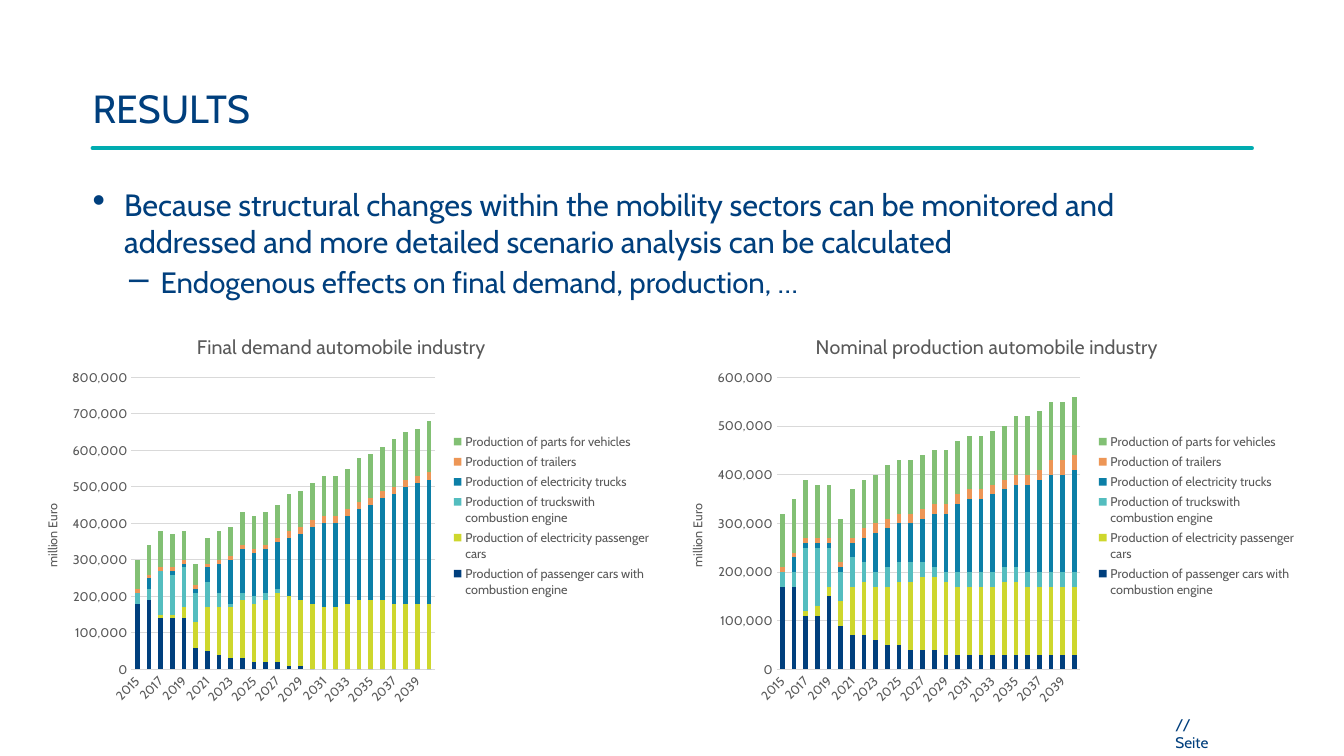
from dataclasses import dataclass

from lxml import etree
from pptx import Presentation
from pptx import util as u
from pptx.chart.axis import CategoryAxis, ValueAxis
from pptx.chart.chart import Chart
from pptx.chart.data import CategoryChartData
from pptx.dml.color import RGBColor
from pptx.enum import chart as charts, dml, shapes, text
from pptx.oxml.ns import qn
from pptx.slide import Slide
from pptx.text.text import Font, TextFrame

NAVY = RGBColor(0x00, 0x3F, 0x7D)
TURQUOISE = RGBColor(0x00, 0xAC, 0xB0)
LIME = RGBColor(0xCE, 0xD7, 0x2D)
AQUA = RGBColor(0x54, 0xBD, 0xBF)
BLUE = RGBColor(0x0C, 0x7F, 0xA7)
ORANGE = RGBColor(0xED, 0x96, 0x56)
GREEN = RGBColor(0x82, 0xC0, 0x74)
GRAY = RGBColor(0x59, 0x59, 0x59)
LIGHT_GRAY = RGBColor(0xD9, 0xD9, 0xD9)
FONT = "Cabin"
YEARS = [str(year) for year in range(2015, 2041)]
VALUE_UNIT = 10_000


@dataclass
class Sector:
    name: str
    color: RGBColor


@dataclass
class Bullet:
    words: str
    symbol: str
    size: float
    level: int
    margin: float
    space_before: float


@dataclass
class IndustryChart:
    title: str
    left: float
    title_x: float
    maximum: int
    values: list[list[int]]


SECTORS = [
    Sector("Production of passenger cars with combustion engine", NAVY),
    Sector("Production of electricity passenger cars", LIME),
    Sector("Production of truckswith combustion engine", AQUA),
    Sector("Production of electricity trucks", BLUE),
    Sector("Production of trailers", ORANGE),
    Sector("Production of parts for vehicles", GREEN),
]
BULLETS = [
    Bullet("Because structural changes within the mobility sectors can be monitored and "
           "addressed and more detailed scenario analysis can be calculated", "•", 22, 0, 22.5, 0),
    Bullet("Endogenous effects on final demand, production, …", "–", 21, 1, 48.5, 3),
]
CHARTS = [
    IndustryChart("Final demand automobile industry", 10.8, 0.276, 800_000, [
        [18, 19, 14, 14, 14, 6, 5, 4, 3, 3, 2, 2, 2, 1, 1] + [0] * 11,
        [0, 0, 1, 1, 3, 7, 12, 13, 14, 16, 16, 17, 19, 19, 18, 18, 17, 17, 18, 19, 19, 19, 18, 18, 18, 18],
        [3, 3, 12, 11, 11, 8, 7, 4, 1, 2, 2, 2, 1] + [0] * 13,
        [0, 3, 0, 1, 1, 1, 4, 8, 12, 12, 12, 12, 13, 16, 18, 21, 23, 23, 24, 25, 26, 28, 30, 32, 33, 34],
        [1] * 13 + [2] * 13,
        [8, 8, 10, 9, 8, 6, 7, 8, 8, 9, 9, 9, 9, 10, 10, 10, 11, 11, 11, 12, 12, 12, 13, 13, 13, 14],
    ]),
    IndustryChart("Nominal production automobile industry", 471.6, 0.235, 600_000, [
        [17, 17, 11, 11, 15, 9, 7, 7, 6, 5, 5, 4, 4, 4] + [3] * 12,
        [0, 0, 1, 2, 2, 5, 10, 11, 11, 12, 13, 14, 15, 15, 15, 14, 14, 14, 14, 15, 15, 14, 14, 14, 14, 14],
        [3, 3, 13, 12, 8, 6, 6, 4, 3, 4, 4, 4, 3, 2, 2] + [3] * 11,
        [0, 3, 1, 1, 1, 1, 3, 5, 8, 8, 8, 8, 9, 11, 12, 14, 15, 15, 16, 16, 17, 18, 19, 20, 20, 21],
        [1] * 7 + [2] * 16 + [3] * 3,
        [11, 11, 12, 11, 11, 9, 10, 10, 10] + [11] * 11 + [12] * 6,
    ]),
]


def style_font(font: Font, size: float, color: RGBColor) -> None:
    font.name = FONT
    font.size = u.Pt(size)
    font.bold = False
    font.color.rgb = color


def set_frame(frame: TextFrame, anchor: text.MSO_ANCHOR, bottom: float = 0) -> None:
    frame.word_wrap = True
    frame.auto_size = text.MSO_AUTO_SIZE.NONE
    frame.vertical_anchor = anchor
    frame.margin_left = frame.margin_right = frame.margin_top = 0
    frame.margin_bottom = u.Pt(bottom)


def add_frame(slide: Slide, left: float, top: float, width: float, height: float) -> TextFrame:
    box = slide.shapes.add_textbox(u.Pt(left), u.Pt(top), u.Pt(width), u.Pt(height))
    set_frame(box.text_frame, text.MSO_ANCHOR.TOP)
    return box.text_frame


def add_title(slide: Slide) -> None:
    title = slide.shapes.title
    title.left, title.top, title.width, title.height = u.Pt(66.2), u.Pt(0.7), u.Pt(828), u.Pt(104.4)
    set_frame(title.text_frame, text.MSO_ANCHOR.BOTTOM, 11.5)
    paragraph = title.text_frame.paragraphs[0]
    paragraph.text = "RESULTS"
    paragraph.alignment = text.PP_ALIGN.LEFT
    style_font(paragraph.font, 28, NAVY)


def add_rule(slide: Slide) -> None:
    rule = slide.shapes.add_connector(
        shapes.MSO_CONNECTOR.STRAIGHT, u.Pt(66.2), u.Pt(105.8), u.Pt(894.2), u.Pt(105.8))
    rule.line.color.rgb = TURQUOISE
    rule.line.width = u.Pt(3)
    properties = rule._element.spPr
    properties.find(qn("a:ln")).set("cap", "rnd")
    etree.SubElement(properties, qn("a:effectLst"))


def add_bullets(slide: Slide) -> None:
    frame = add_frame(slide, 66.2, 133, 828, 90)
    for index, bullet in enumerate(BULLETS):
        paragraph = frame.add_paragraph() if index else frame.paragraphs[0]
        paragraph.text = bullet.words
        paragraph.level = bullet.level
        paragraph.space_before = u.Pt(bullet.space_before)
        properties = paragraph._p.get_or_add_pPr()
        properties.set("marL", str(u.Pt(bullet.margin)))
        properties.set("indent", str(u.Pt(-22.5)))
        etree.SubElement(properties, qn("a:buSzPct")).set("val", "120000")
        etree.SubElement(properties, qn("a:buChar")).set("char", bullet.symbol)
        style_font(paragraph.font, bullet.size, NAVY)


def place(element: etree._Element, index: int, **fractions: float) -> None:
    for layout in element.findall(qn("c:layout")):
        element.remove(layout)
    layout = etree.Element(qn("c:layout"))
    element.insert(index, layout)
    manual = etree.SubElement(layout, qn("c:manualLayout"))
    if element.tag == qn("c:plotArea"):
        etree.SubElement(manual, qn("c:layoutTarget")).set("val", "inner")
    for side in ("xMode", "yMode"):
        etree.SubElement(manual, qn(f"c:{side}")).set("val", "edge")
    for name, fraction in fractions.items():
        etree.SubElement(manual, qn(f"c:{name}")).set("val", str(fraction))


def add_caption(owner: Chart | ValueAxis, words: str, size: float, x: float, y: float) -> None:
    title = owner.chart_title if isinstance(owner, Chart) else owner.axis_title
    paragraph = title.text_frame.paragraphs[0]
    paragraph.text = words
    style_font(paragraph.font, size, GRAY)
    style_font(paragraph.runs[0].font, size, GRAY)
    place(title._element, 1, x=x, y=y)


def style_axis(axis: CategoryAxis | ValueAxis) -> None:
    axis.major_tick_mark = axis.minor_tick_mark = charts.XL_TICK_MARK.NONE
    style_font(axis.tick_labels.font, 9, GRAY)


def add_industry_chart(slide: Slide, industry: IndustryChart) -> None:
    data = CategoryChartData(number_format="#,##0")
    data.categories = YEARS
    for sector, values in zip(SECTORS, industry.values):
        data.add_series(sector.name, [value * VALUE_UNIT for value in values])
    chart = slide.shapes.add_chart(
        charts.XL_CHART_TYPE.COLUMN_STACKED, u.Pt(industry.left), u.Pt(223.9),
        u.Pt(461.5), u.Pt(285.8), data).chart
    style_font(chart.font, 10, GRAY)
    plot = chart.plots[0]
    plot.gap_width, plot.overlap, plot.vary_by_categories = 150, 100, False
    for series, sector in zip(plot.series, SECTORS):
        series.format.fill.solid()
        series.format.fill.fore_color.rgb = sector.color

    years, amounts = chart.category_axis, chart.value_axis
    style_axis(years)
    years.format.line.color.rgb = LIGHT_GRAY
    years.format.line.width = u.Pt(0.75)
    years._element.find(qn("c:txPr")).find(qn("a:bodyPr")).set("rot", "-2700000")
    style_axis(amounts)
    amounts.minimum_scale, amounts.maximum_scale, amounts.major_unit = 0, industry.maximum, 100_000
    amounts.tick_labels.number_format = "#,##0"
    amounts.tick_labels.number_format_is_linked = False
    amounts.format.line.fill.background()
    grid = amounts.major_gridlines.format.line
    grid.color.rgb, grid.width, grid.dash_style = LIGHT_GRAY, u.Pt(0.75), dml.MSO_LINE.SOLID

    add_caption(chart, industry.title, 14, industry.title_x, 0.04)
    add_caption(amounts, "million Euro", 9, 0.04, 0.47)
    direction = amounts.axis_title.text_frame._txBody.find(qn("a:bodyPr"))
    direction.set("rot", "-5400000")
    direction.set("vert", "horz")
    chart.has_legend = True
    chart.legend.position = charts.XL_LEGEND_POSITION.RIGHT
    chart.legend.include_in_layout = False
    style_font(chart.legend.font, 9, GRAY)
    place(chart.legend._element, 1, x=0.67, y=0.29, w=0.32, h=0.43)
    place(chart._chartSpace.chart.plotArea, 0, x=0.18, y=0.16, w=0.47, h=0.73)


def main() -> None:
    presentation = Presentation()
    presentation.slide_width, presentation.slide_height = u.Pt(960), u.Pt(540)
    slide = presentation.slides.add_slide(presentation.slide_layouts[5])
    add_rule(slide)
    page_label = add_frame(slide, 839.5, 510.5, 40.3, 29.5).paragraphs[0]
    page_label.text = "//\vSeite"
    style_font(page_label.font, 11, NAVY)
    add_title(slide)
    add_bullets(slide)
    for industry in CHARTS:
        add_industry_chart(slide, industry)
    presentation.save("out.pptx")


if __name__ == "__main__":
    main()
